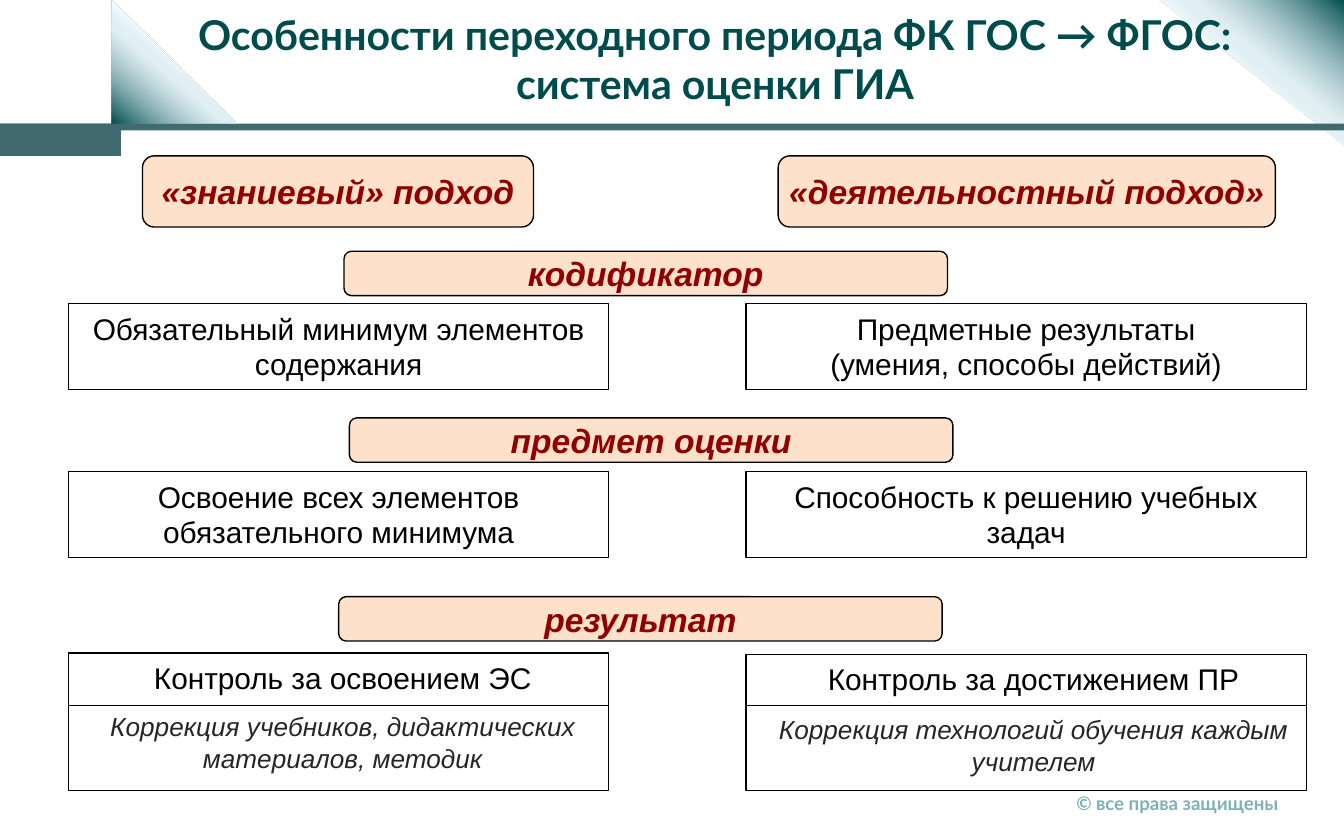
from typing import NamedTuple

from lxml.etree import SubElement
from pptx import Presentation
from pptx.dml.color import RGBColor
from pptx.enum.shapes import MSO_CONNECTOR, MSO_SHAPE
from pptx.enum.text import MSO_ANCHOR, PP_ALIGN
from pptx.oxml import parse_xml
from pptx.oxml.ns import nsdecls, qn
from pptx.util import Inches, Pt

BLACK = RGBColor(0x00, 0x00, 0x00)
DARK_GRAY = RGBColor(0x26, 0x26, 0x26)
DARK_RED = RGBColor(0x90, 0x00, 0x00)
PEACH = RGBColor(0xFD, 0xE1, 0xCA)
SLATE = RGBColor(0x41, 0x6A, 0x6F)
TEAL = RGBColor(0x00, 0x4C, 0x4D)
PALE_TEAL = RGBColor(0x81, 0xAF, 0xB5)
PALE = RGBColor(0xF7, 0xFF, 0xFF)
ICE = RGBColor(0xC4, 0xE0, 0xEA)
DEEP = RGBColor(0x00, 0x33, 0x33)

STOPS = [(46, PALE, 100), (58, ICE, 50), (100, TEAL, 100), (100, DEEP, 100)]


class Box(NamedTuple):
    x: float
    y: float
    w: float
    h: float


class Column(NamedTuple):
    x: float
    w: float


class Outcome(NamedTuple):
    column: Column
    top: float
    shift: float
    gap: float
    control: str
    correction: str


LEFT = Column(0.51, 4.02)
RIGHT = Column(5.55, 4.17)
BOTTOM = 5.88
DIVIDER = 5.25

LABELS = [
    (Box(1.06, 1.16, 2.91, 0.53), "«знаниевый» подход"),
    (Box(5.79, 1.16, 3.7, 0.53), "«деятельностный подход»"),
    (Box(2.56, 1.87, 4.49, 0.33), "кодификатор"),
    (Box(2.6, 3.11, 4.49, 0.33), "предмет оценки"),
    (Box(2.52, 4.44, 4.49, 0.33), "результат"),
]

ROWS = [
    (2.26, "Обязательный минимум элементов содержания",
     "Предметные результаты\v(умения, способы действий)"),
    (3.51, "Освоение всех элементов обязательного минимума",
     "Способность к решению учебных задач"),
]

OUTCOMES = [
    Outcome(LEFT, 4.86, 0.06, 8, "Контроль за освоением ЭС",
            "Коррекция учебников, дидактических материалов, методик"),
    Outcome(RIGHT, 4.87, 0.11, 9, "Контроль за достижением ПР",
            "Коррекция технологий обучения каждым учителем"),
]


def write(p, text, *, size, color, font="Arial", bold=False, italic=False,
          align=PP_ALIGN.CENTER, before=0) -> None:
    p.text = text
    p.alignment = align
    p.space_before = Pt(before)
    for r in p.runs:
        f = r.font
        f.name, f.size, f.bold, f.italic = font, Pt(size), bold, italic
        f.color.rgb = color


def place(sp, box: Box) -> None:
    sp.left, sp.top, sp.width, sp.height = map(Inches, box)


def add_box(s, kind, box: Box, fill=None, line=None):
    sp = s.shapes.add_shape(kind, *map(Inches, box))
    sp.shadow.inherit = False
    if fill is None:
        sp.fill.background()
    else:
        sp.fill.solid()
        sp.fill.fore_color.rgb = fill
    if line is None:
        sp.line.fill.background()
    else:
        sp.line.color.rgb = line
        sp.line.width = Pt(0.75)
    tf = sp.text_frame
    tf.word_wrap = True
    tf.vertical_anchor = MSO_ANCHOR.TOP
    return sp


def add_triangle(s, box: Box, rotation: int) -> None:
    sp = add_box(s, MSO_SHAPE.RIGHT_TRIANGLE, box)
    sp.rotation = rotation
    spPr = sp._element.spPr
    spPr.find(qn("a:xfrm")).set("flipH", "1")
    stops = "".join(
        f'<a:gs pos="{pos * 1000}"><a:srgbClr val="{color}">'
        f'<a:alpha val="{alpha * 1000}"/></a:srgbClr></a:gs>'
        for pos, color, alpha in STOPS)
    grad = parse_xml(
        f'<a:gradFill {nsdecls("a")} rotWithShape="1"><a:gsLst>{stops}</a:gsLst>'
        f'<a:lin ang="{140 * 60000}" scaled="0"/></a:gradFill>')
    spPr.replace(spPr.find(qn("a:noFill")), grad)


def add_label(s, box: Box, text: str) -> None:
    sp = add_box(s, MSO_SHAPE.ROUNDED_RECTANGLE, box, PEACH, BLACK)
    tf = sp.text_frame
    tf.word_wrap = False
    tf.vertical_anchor = MSO_ANCHOR.MIDDLE
    write(tf.paragraphs[0], text, size=18, color=DARK_RED, bold=True, italic=True)


def add_card(s, column: Column, top: float, height: float, text: str):
    box = Box(column.x, top, column.w, height)
    tf = add_box(s, MSO_SHAPE.RECTANGLE, box, line=BLACK).text_frame
    write(tf.paragraphs[0], text, size=16, color=BLACK)
    return tf


def add_outcome(s, outcome: Outcome) -> None:
    column = outcome.column
    tf = add_card(s, column, outcome.top, BOTTOM - outcome.top, outcome.control)
    tf.margin_left = Inches(0.1 + outcome.shift)
    write(tf.add_paragraph(), outcome.correction, size=14, color=DARK_GRAY,
          italic=True, before=outcome.gap)
    line = s.shapes.add_connector(
        MSO_CONNECTOR.STRAIGHT, Inches(column.x), Inches(DIVIDER),
        Inches(column.x + column.w), Inches(DIVIDER))
    line.line.color.rgb = BLACK
    line.line.width = Pt(0.75)
    SubElement(line._element.spPr, qn("a:effectLst"))


def main() -> None:
    prs = Presentation()
    prs.slide_width, prs.slide_height = Inches(10), Inches(6.25)
    s = prs.slides.add_slide(prs.slide_layouts[5])

    add_triangle(s, Box(8.77, -0.15, 1.08, 1.38), 270)
    add_box(s, MSO_SHAPE.RECTANGLE, Box(0, 0.92, 10, 0.05), SLATE)
    add_box(s, MSO_SHAPE.RECTANGLE, Box(0, 0.92, 0.9, 0.24), SLATE)
    add_triangle(s, Box(0.84, -0.01, 0.92, 0.94), 90)

    title = s.shapes.title
    place(title, Box(0.83, 0.02, 8.98, 0.84))
    s.shapes._spTree.append(title._element)
    title.text_frame.vertical_anchor = MSO_ANCHOR.TOP
    write(title.text_frame.paragraphs[0],
          "Особенности переходного периода ФК ГОС → ФГОС: система оценки ГИА",
          size=22, color=TEAL, font="Lato", bold=True)

    for box, text in LABELS:
        add_label(s, box, text)
    for top, knowledge, activity in ROWS:
        add_card(s, LEFT, top, 0.64, knowledge)
        add_card(s, RIGHT, top, 0.64, activity)
    for outcome in OUTCOMES:
        add_outcome(s, outcome)

    rights = s.shapes.add_textbox(*map(Inches, Box(7.91, 5.84, 1.94, 0.27)))
    rights.text_frame.word_wrap = True
    write(rights.text_frame.paragraphs[0], "© все права защищены", size=10,
          color=PALE_TEAL, font="Lato", bold=True, align=PP_ALIGN.LEFT)

    prs.save("out.pptx")


if __name__ == "__main__":
    main()
